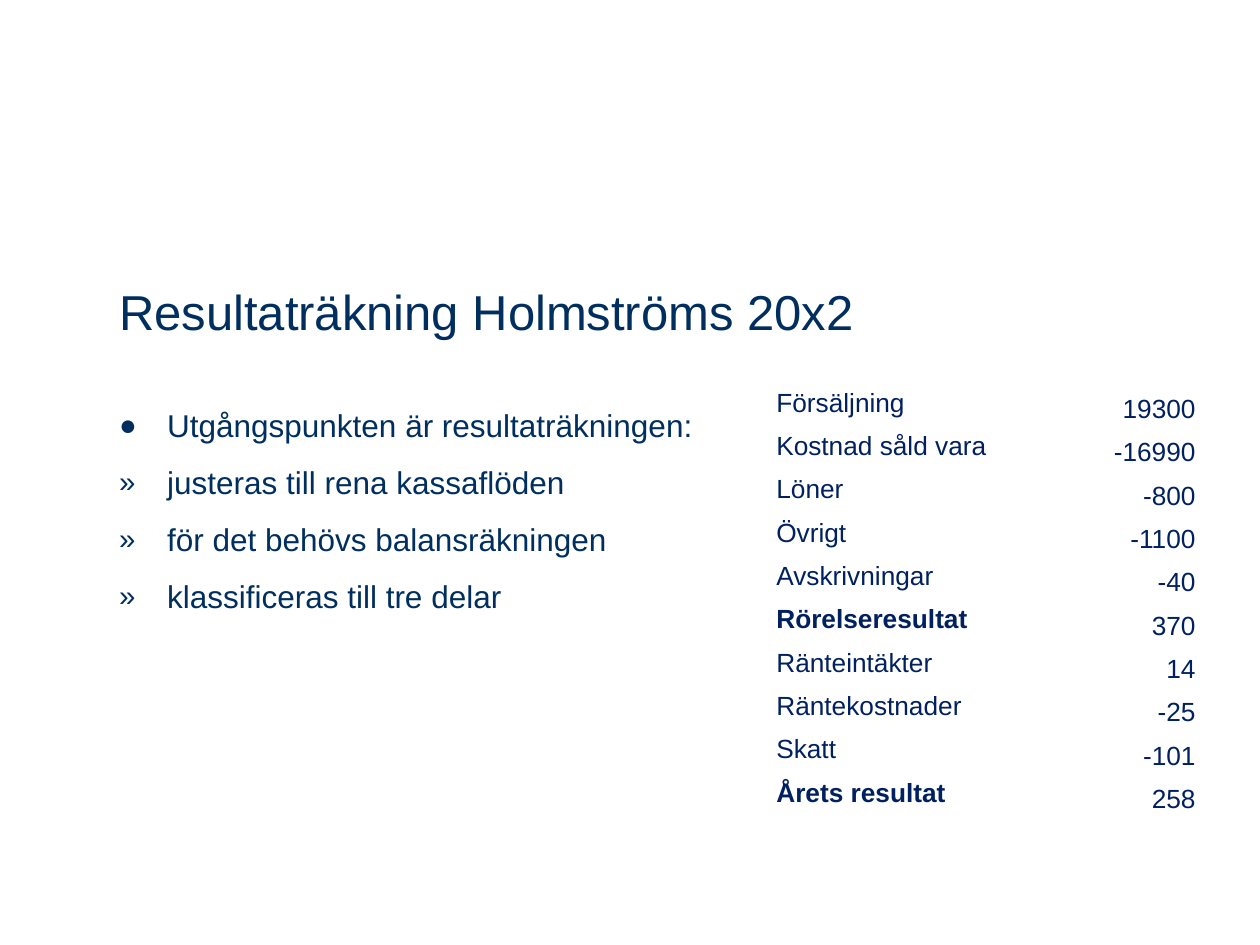
from lxml import etree
from pptx import Presentation
from pptx.dml.color import RGBColor
from pptx.enum.text import MSO_ANCHOR as Anchor, MSO_AUTO_SIZE as AutoSize, PP_ALIGN as Align
from pptx.oxml.ns import qn
from pptx.util import Cm, Pt

NAVY = RGBColor(0x00, 0x2F, 0x5F)
TABLE_BLUE = RGBColor(0x00, 0x20, 0x60)
FONT = "Arial"

TITLE = "Resultaträkning Holmströms 20x2"
BULLETS = [
    ("●", "Utgångspunkten är resultaträkningen:"),
    ("»", "justeras till rena kassaflöden"),
    ("»", "för det behövs balansräkningen"),
    ("»", "klassificeras till tre delar"),
]
INCOME_STATEMENT = [
    ("Försäljning", 19300),
    ("Kostnad såld vara", -16990),
    ("Löner", -800),
    ("Övrigt", -1100),
    ("Avskrivningar", -40),
    ("Rörelseresultat", 370),
    ("Ränteintäkter", 14),
    ("Räntekostnader", -25),
    ("Skatt", -101),
    ("Årets resultat", 258),
]
TOTALS = {"Rörelseresultat", "Årets resultat"}


def apply_format(target, values):
    for name, value in values.items():
        setattr(target, name, value)


def format_font(font, size, color, bold=False):
    apply_format(font, {"name": FONT, "size": Pt(size), "bold": bold})
    font.color.rgb = color


def place(shape, left, top, width, height, inset_top):
    apply_format(shape, {"left": Cm(left), "top": Cm(top),
                         "width": Cm(width), "height": Cm(height)})
    apply_format(shape.text_frame, {
        "word_wrap": True, "auto_size": AutoSize.NONE,
        "vertical_anchor": Anchor.TOP, "margin_left": Cm(0.19),
        "margin_right": Cm(0.19), "margin_top": Cm(inset_top)})


def add_bullet(paragraph, character):
    properties = paragraph._p.get_or_add_pPr()
    properties.set("marL", str(Cm(0.97)))
    properties.set("indent", str(-Cm(0.97)))
    for tag, key, value in (("a:buSzPct", "val", "93000"),
                            ("a:buFont", "typeface", FONT),
                            ("a:buChar", "char", character)):
        etree.SubElement(properties, qn(tag)).set(key, value)


def fill_title(shape):
    place(shape, 2.21, 5.41, 16.1, 2.21, 0.27)
    paragraph = shape.text_frame.paragraphs[0]
    paragraph.text = TITLE
    paragraph.alignment = Align.LEFT
    format_font(paragraph.font, 28, NAVY)


def fill_list(shape):
    place(shape, 2.21, 7.8, 13.03, 8.94, 0.13)
    frame = shape.text_frame
    for index, (character, text) in enumerate(BULLETS):
        paragraph = frame.add_paragraph() if index else frame.paragraphs[0]
        paragraph.text = text
        add_bullet(paragraph, character)
        apply_format(paragraph, {"line_spacing": Pt(29),
                                 "space_before": Pt(3.6 if index else 0)})
        format_font(paragraph.font, 18, NAVY)


def fill_cell(cell, text, anchor, alignment, bold=False):
    cell.fill.background()
    apply_format(cell, {
        "vertical_anchor": anchor, "margin_left": Cm(0.03),
        "margin_right": Cm(0.03), "margin_top": Cm(0.03), "margin_bottom": 0})
    paragraph = cell.text_frame.paragraphs[0]
    paragraph.text = text
    paragraph.alignment = alignment
    format_font(paragraph.font, 15, TABLE_BLUE, bold)


def add_income_table(slide):
    table = slide.shapes.add_table(len(INCOME_STATEMENT), 2, Cm(15.62), Cm(7.8),
                                   Cm(8.51), Cm(8.74)).table
    apply_format(table, {"first_row": False, "horz_banding": False})
    for column, width in zip(table.columns, (5.46, 3.05)):
        column.width = Cm(width)
    for row, (label, amount) in enumerate(INCOME_STATEMENT):
        fill_cell(table.cell(row, 0), label, Anchor.TOP, Align.LEFT, label in TOTALS)
        fill_cell(table.cell(row, 1), str(amount), Anchor.MIDDLE, Align.RIGHT)


def main():
    presentation = Presentation()
    apply_format(presentation, {"slide_width": Cm(25.4), "slide_height": Cm(19.05)})
    slide = presentation.slides.add_slide(presentation.slide_layouts[1])

    # Title and bullet list
    fill_title(slide.shapes.title)
    fill_list(slide.placeholders[1])

    # Income statement
    add_income_table(slide)
    presentation.save("out.pptx")


if __name__ == "__main__":
    main()
